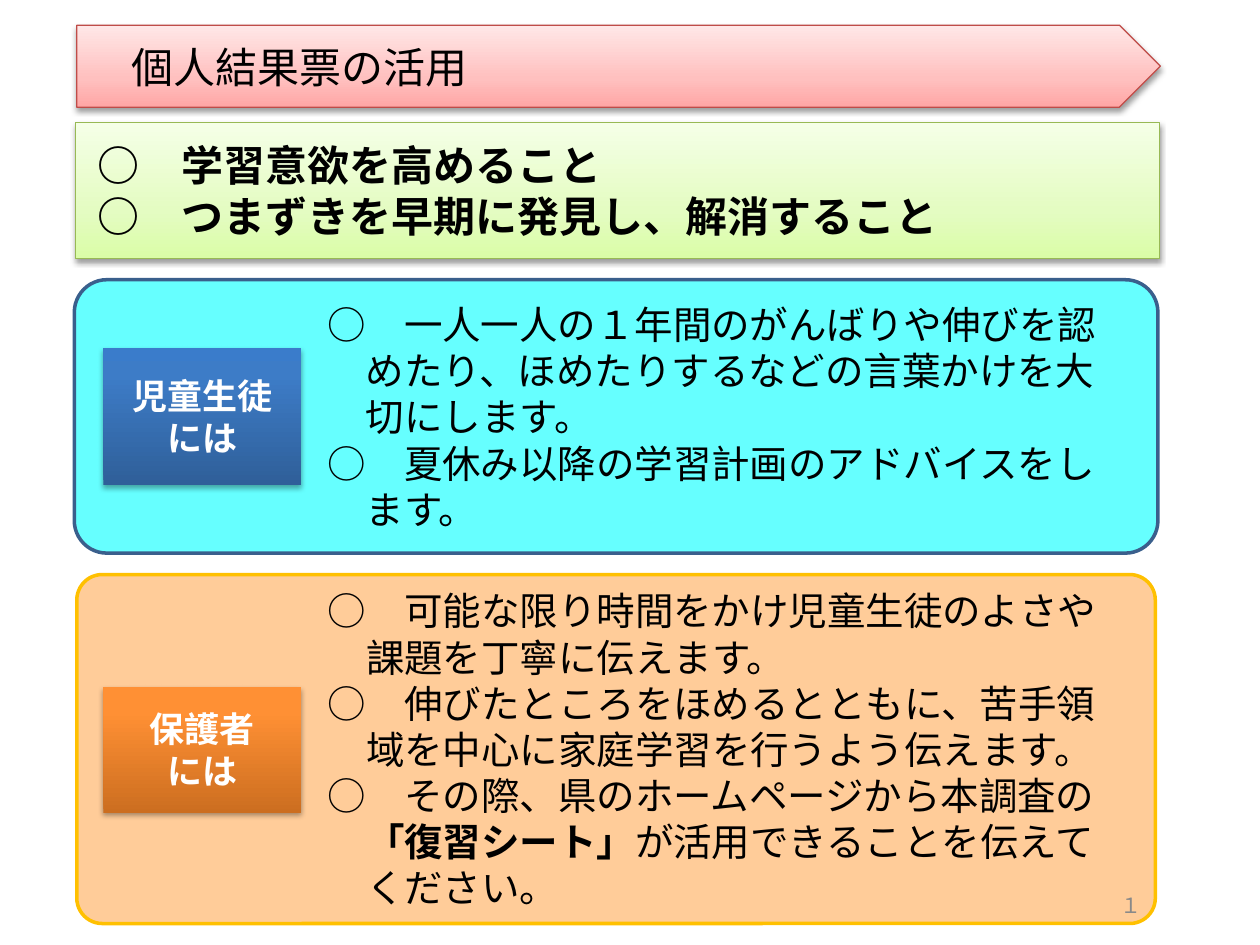
"""Build a slide on using individual result sheets with pupils and parents."""
import copy
import pptx
import pptx.dml.color
import pptx.enum.shapes
import pptx.enum.text
import pptx.oxml
import pptx.oxml.ns
import pptx.util

Pt = pptx.util.Pt
RGB = pptx.dml.color.RGBColor.from_string
KIND = pptx.enum.shapes.MSO_SHAPE
ALIGN = pptx.enum.text.PP_ALIGN
qn = pptx.oxml.ns.qn

THEME = {
    "font": "Noto Sans CJK JP", "digit": "Calibri",
    "head": 24, "list": 22, "badge": 20, "page": 12,
    "ink": "000000", "white": "FFFFFF", "gray": "898989",
    "red": [(0, "FFA6A5"), (0.35, "FFC0BF"), (1, "FFE7E7")], "red line": "BF4C48",
    "green": [(0, "DAFDA7"), (0.35, "E4FCC2"), (1, "F5FFE7")], "green line": "98B955",
    "blue": [(0, "2F5F99"), (0.8, "3D7CC7"), (1, "3A7CCB")],
    "orange": [(0, "CC6E20"), (0.8, "FF9034"), (1, "FF9136")],
    "cyan": "66FFFF", "cyan line": "3A5F8C",
    "peach": "FFCC99", "peach line": "FFC000",
}

deck = pptx.Presentation()
deck.slide_width = pptx.util.Inches(10)
deck.slide_height = pptx.util.Inches(7.5)
col, row = deck.slide_width / 100, deck.slide_height / 100
slide = deck.slides.add_slide(deck.slide_layouts[1])
shapes = slide.shapes


def write(shape, text, size="list", color="ink", font="font", bold=False,
          align=ALIGN.LEFT, left=0, hang=0, right=0.1):
    """Set one paragraph per line; asterisks enclose bold words."""
    frame = shape.text_frame
    frame.clear()
    frame.word_wrap = True
    frame.auto_size = pptx.enum.text.MSO_AUTO_SIZE.NONE
    frame.vertical_anchor = pptx.enum.text.MSO_ANCHOR.MIDDLE
    frame.margin_right = pptx.util.Inches(right)
    em = Pt(THEME[size])
    for n, line in enumerate(text.split("\n")):
        para = frame.add_paragraph() if n else frame.paragraphs[0]
        para.alignment = align
        para.line_spacing = Pt(THEME[size] * 1.2)
        para.space_before = Pt(0)
        props = para._p.get_or_add_pPr()
        props.set("marL", str(int(em * (left + hang))))
        props.set("indent", str(int(-em * hang)))
        props.append(pptx.oxml.parse_xml(
            f'<a:buNone {pptx.oxml.ns.nsdecls("a")}/>'))
        for k, part in enumerate(line.split("*")):
            run = para.add_run()
            run.text = part
            run.font.size = em
            run.font.bold = bold or k % 2 == 1
            run.font.name = THEME[font]
            run.font.color.rgb = RGB(THEME[color])
            face = run._r.rPr.makeelement(qn("a:ea"), {"typeface": THEME["font"]})
            run._r.rPr.find(qn("a:latin")).addnext(face)


def paint(shape, fill, line=None, width=0.75, shade=None):
    """Give a shape its flat or graded fill, its line and its shadow."""
    tone = THEME[fill]
    if isinstance(tone, str):
        shape.fill.solid()
        shape.fill.fore_color.rgb = RGB(tone)
    else:
        shape.fill.gradient()
        shape.fill.gradient_angle = 90
        stops = shape._element.spPr.find(".//" + qn("a:gsLst"))
        stops.append(copy.deepcopy(stops[0]))
        for stop, (place, hue) in zip(shape.fill.gradient_stops, tone):
            stop.position = place
            stop.color.rgb = RGB(hue)
    if line:
        shape.line.color.rgb = RGB(THEME[line])
        shape.line.width = Pt(width)
    else:
        shape.line.fill.background()
    shape.shadow.inherit = False
    if shade:
        shape._element.spPr.find(qn("a:effectLst")).append(pptx.oxml.parse_xml(
            f'<a:outerShdw {pptx.oxml.ns.nsdecls("a")} blurRad="{Pt(3.1)}" '
            f'dist="{Pt(1.7)}" dir="5400000" rotWithShape="0"><a:srgbClr val="000000">'
            f'<a:alpha val="{shade * 1000}"/></a:srgbClr></a:outerShdw>'))


x, y, w, h = [int(v) for v in (6.1 * col, 2.67 * row, 86 * col, 8.67 * row)]
arrow = shapes.add_shape(KIND.PENTAGON, x, y, w, h)
paint(arrow, "red", "red line", shade=38)
title = shapes.title
title.left, title.top, title.width, title.height = x, y, w, h
write(title, "個人結果票の活用", size="head", left=1)
arrow._element.addnext(title._element)

goals = slide.placeholders[1]
goals.left, goals.top = int(6 * col), int(12.93 * row)
goals.width, goals.height = int(86 * col), int(14.4 * row)
paint(goals, "green", "green line", shade=38)
write(goals, " ○　学習意欲を高めること\n ○　つまずきを早期に発見し、解消すること",
      size="head", bold=True)

groups = [
    ("cyan", (5.9, 29.6, 86, 28.93), 0.119,
     "○　一人一人の１年間のがんばりや伸びを認めたり、ほめたりするなどの言葉かけを大切にします。\n"
     "○　夏休み以降の学習計画のアドバイスをします。",
     "blue", (36.8, 14.53), "児童生徒\nには"),
    ("peach", (6.1, 60.8, 85.6, 36.93), 0.073,
     "○　可能な限り時間をかけ児童生徒のよさや課題を丁寧に伝えます。\n"
     "○　伸びたところをほめるとともに、苦手領域を中心に家庭学習を行うよう伝えます。\n"
     "○　その際、県のホームページから本調査の*「復習シート」*が活用できることを伝えてください。",
     "orange", (72.67, 13.33), "保護者\nには"),
]
for fill, (x, y, w, h), curve, text, hue, (top, tall), name in groups:
    panel = shapes.add_shape(KIND.ROUNDED_RECTANGLE, int(x * col), int(y * row),
                             int(w * col), int(h * row))
    panel.adjustments[0] = curve
    paint(panel, fill, fill + " line", width=2)
    write(panel, text, left=6, hang=1, right=0.25)
    badge = shapes.add_shape(KIND.RECTANGLE, int(8.2 * col), int(top * row),
                             int(15.7 * col), int(tall * row))
    paint(badge, hue, shade=35)
    write(badge, name, size="badge", color="white", bold=True, align=ALIGN.CENTER)

page = shapes.add_textbox(int(68.3 * col), int(93.07 * row),
                          int(23.3 * col), int(5.33 * row))
write(page, "１", size="page", color="gray", font="digit", align=ALIGN.RIGHT)

deck.save("out.pptx")
